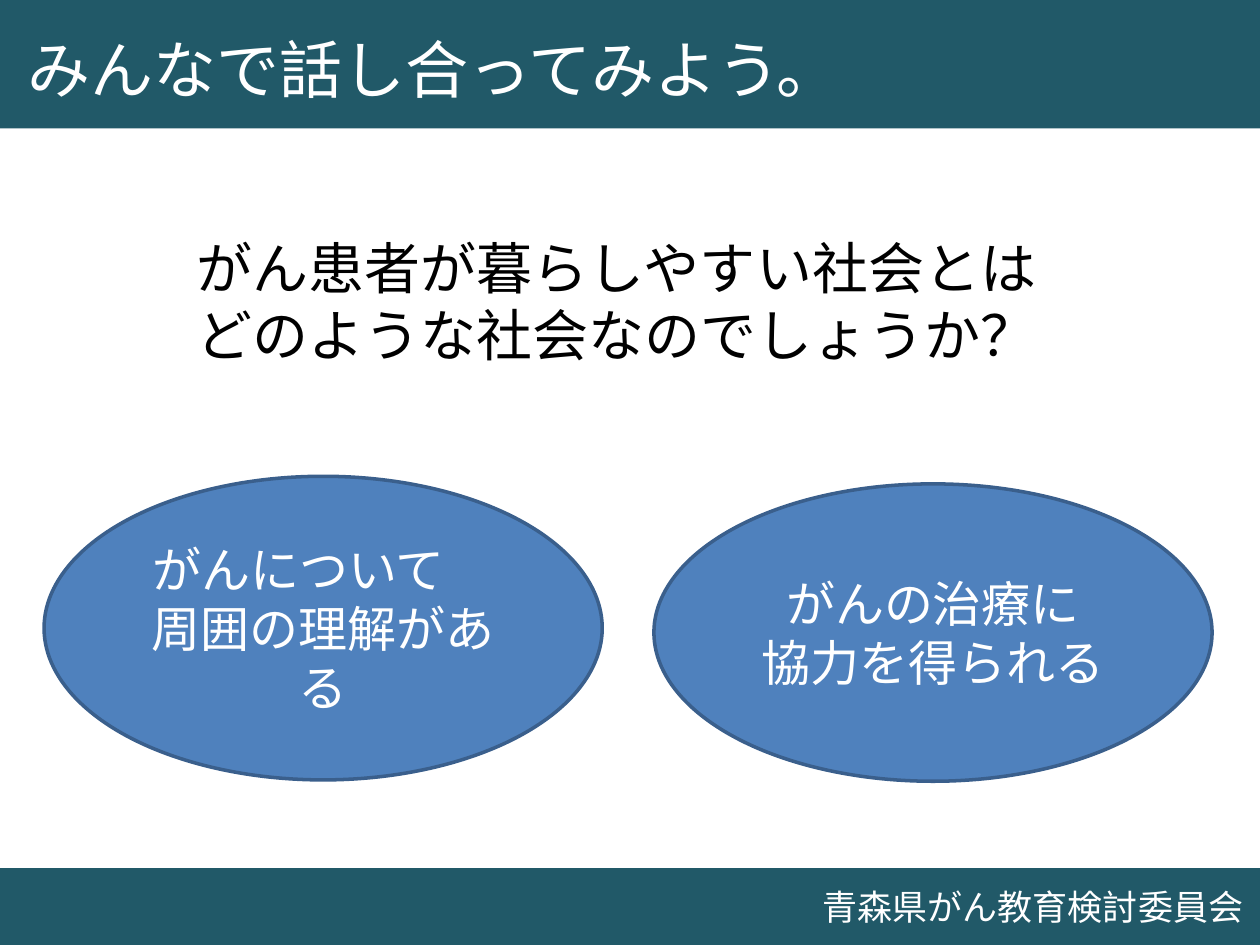
from lxml.etree import SubElement
from pptx import Presentation
from pptx.dml.color import RGBColor
from pptx.enum.shapes import MSO_SHAPE
from pptx.enum.text import MSO_ANCHOR, MSO_AUTO_SIZE, PP_ALIGN
from pptx.oxml.ns import qn
from pptx.util import Inches, Pt

COLORS = {"band": "215968", "oval": "4F81BD", "outline": "3A5F8C",
          "light": "FFFFFF", "dark": "000000"}
JAPANESE = "Noto Sans CJK JP"
WIDTH, HEIGHT = 10, 7.5
GRID = 100  # columns and rows across the slide


class DiscussionSlide:
    """Holds the style and the current slide; boxes are in grid units."""

    def __init__(self, deck):
        self.slide = deck.slides.add_slide(deck.slide_layouts[5])

    @staticmethod
    def color(name):
        return RGBColor.from_string(COLORS[name])

    @staticmethod
    def place(column, row, columns, rows):
        return [Inches(column * WIDTH / GRID), Inches(row * HEIGHT / GRID),
                Inches(columns * WIDTH / GRID), Inches(rows * HEIGHT / GRID)]

    def set_text(self, holder, lines, size, color="light", latin=JAPANESE,
                 align=PP_ALIGN.LEFT, **frame_format):
        frame = holder.text_frame
        layout = {"word_wrap": True, "auto_size": MSO_AUTO_SIZE.NONE,
                  "vertical_anchor": MSO_ANCHOR.TOP, **frame_format}
        for name, value in layout.items():
            setattr(frame, name, value)
        frame.text = "\n".join(lines)
        for paragraph in frame.paragraphs:
            paragraph.alignment = align
            font = paragraph.runs[0].font
            for name, value in {"size": Pt(size), "name": latin}.items():
                setattr(font, name, value)
            font.color.rgb = self.color(color)
        # Japanese glyphs use the East Asian typeface
        for properties in holder.element.iter(qn("a:rPr")):
            SubElement(properties, qn("a:ea")).set("typeface", JAPANESE)

    def shape(self, preset, box, fill, outline=None):
        shape = self.slide.shapes.add_shape(preset, *self.place(*box))
        shape.shadow.inherit = False
        shape.fill.solid()
        shape.fill.fore_color.rgb = self.color(fill)
        if outline:
            shape.line.color.rgb = self.color(outline)
            shape.line.width = Pt(2)
        else:
            shape.line.fill.background()
        return shape

    def band(self, row, rows):
        self.shape(MSO_SHAPE.RECTANGLE, (0, row, GRID, rows), "band")

    def title(self, box, text, size):
        title = self.slide.shapes.title
        for side, value in zip(("left", "top", "width", "height"), self.place(*box)):
            setattr(title, side, value)
        self.set_text(title, [text], size)
        # Bring the title in front of its band
        title.element.getparent().append(title.element)

    def text(self, box, text, size, **style):
        label = self.slide.shapes.add_textbox(*self.place(*box))
        self.set_text(label, [text], size, **style)

    def oval(self, box, lines, latin):
        oval = self.shape(MSO_SHAPE.OVAL, box, "oval", "outline")
        self.set_text(oval, lines, 28, latin=latin, align=PP_ALIGN.CENTER,
                      vertical_anchor=MSO_ANCHOR.MIDDLE)


def main():
    deck = Presentation()
    deck.slide_width, deck.slide_height = Inches(WIDTH), Inches(HEIGHT)
    page = DiscussionSlide(deck)

    # Header and footer bands
    page.band(0, 13.6)
    page.band(91.87, 8.13)

    # Title and question
    page.title((1.2, 2.53, 69.3, 9.47), "みんなで話し合ってみよう。", 36)
    page.text((14.6, 24, 70.8, 15.73),
              "がん患者が暮らしやすい社会とはどのような社会なのでしょうか？",
              32, color="dark")

    # Two answers
    page.oval((3.5, 50.4, 44.3, 32.13),
              ["がんについて　", "周囲の理解がある"], "Cabin")
    page.oval((51.9, 51.2, 44.3, 31.47),
              ["がんの治療に", "協力を得られる"], JAPANESE)

    # Footer credit
    page.text((64.3, 93.07, 35.7, 5.87), "青森県がん教育検討委員会", 20,
              word_wrap=False)

    deck.save("out.pptx")


if __name__ == "__main__":
    main()
